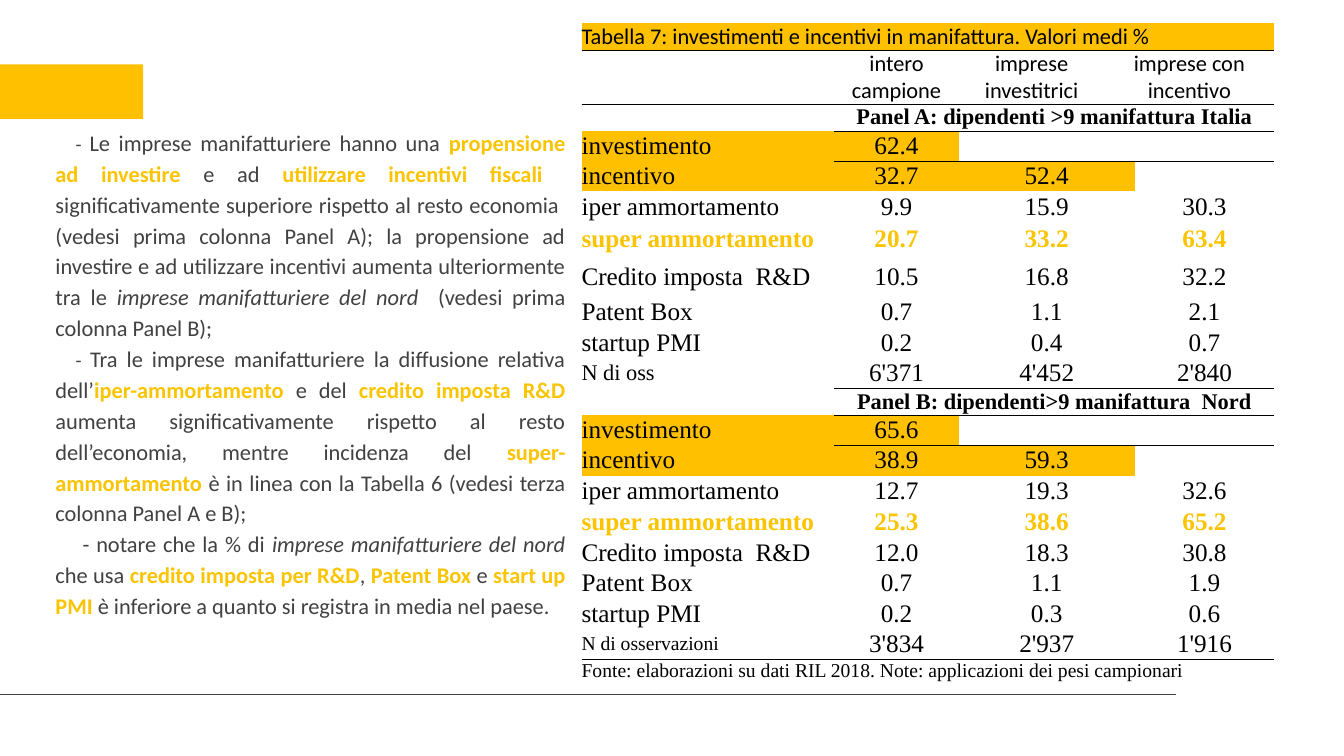
from lxml import etree
from pptx import Presentation
from pptx.dml.color import RGBColor
from pptx.enum.shapes import MSO_CONNECTOR, MSO_SHAPE
from pptx.enum.text import MSO_ANCHOR, MSO_AUTO_SIZE, PP_ALIGN
from pptx.oxml.ns import qn
from pptx.util import Pt

LEFT, CENTER, JUST = PP_ALIGN.LEFT, PP_ALIGN.CENTER, PP_ALIGN.JUSTIFY
MIDDLE, TOP = MSO_ANCHOR.MIDDLE, MSO_ANCHOR.TOP
RECT, STRAIGHT = MSO_SHAPE.RECTANGLE, MSO_CONNECTOR.STRAIGHT
GROW = MSO_AUTO_SIZE.SHAPE_TO_FIT_TEXT
NO_GRID = "{2D5ABB26-0587-4C30-8999-92F81FD0307C}"

AMBER, GOLD, GREY, BLACK = "FFC000", "FAC400", "404140", "000000"
SANS, SERIF = "Calibri", "Times New Roman"

BASE = {"name": SANS, "size": Pt(16), "color": GREY}
PLAIN, DASH, SLANT = {}, {"size": Pt(14)}, {"italic": True}
KEY = {"bold": True, "color": GOLD}

NOTES = [
    [("- ", DASH), ("Le imprese manifatturiere hanno una ", PLAIN),
     ("propensione ad investire ", KEY), ("e ad ", PLAIN),
     ("utilizzare incentivi fiscali  ", KEY),
     ("significativamente superiore rispetto al resto economia  (vedesi prima "
      "colonna Panel A); la propensione ad investire e ad utilizzare incentivi "
      "aumenta ulteriormente tra le ", PLAIN),
     ("imprese manifatturiere del nord  ", SLANT),
     ("(vedesi prima colonna Panel B);", PLAIN)],
    [("- ", DASH),
     ("Tra le imprese manifatturiere la diffusione relativa dell’", PLAIN),
     ("iper-ammortamento", KEY), (" e del ", PLAIN),
     ("credito imposta R&D ", KEY),
     ("aumenta significativamente rispetto al resto dell’economia, mentre "
      "incidenza del ", PLAIN),
     ("super-ammortamento ", KEY),
     ("è in linea con la Tabella 6 (vedesi terza colonna Panel A e B);", PLAIN)],
    [(" - notare che la % di ", PLAIN),
     ("imprese manifatturiere del nord ", SLANT), ("che usa ", PLAIN),
     ("credito imposta per R&D", KEY), (", ", PLAIN), ("Patent Box ", KEY),
     ("e ", PLAIN), ("start up PMI", KEY),
     (" è inferiore a quanto si registra in media nel paese.", PLAIN)],
]

# First and last column of each cell, by kind of row
SPANS = {
    "full": [(0, 4)],
    "head": [(0, 0), (1, 1), (2, 2), (3, 4)],
    "panel": [(0, 0), (1, 4)],
    "data": [(0, 0), (1, 1), (2, 3), (4, 4)],
}
STYLES = {
    "full": {"name": SERIF, "size": Pt(14)},
    "head": {"name": SANS, "size": Pt(16)},
    "panel": {"name": SERIF, "size": Pt(16), "bold": True},
    "data": {"name": SERIF, "size": Pt(18)},
}
LABELS = {
    "Tabella 7: investimenti e incentivi in manifattura. Valori medi %":
        {"name": SANS, "size": Pt(16)},
    "N di oss": {"size": Pt(16)},
    "N di osservazioni": {"size": Pt(14)},
}
FILLED = ("Tabella 7: investimenti e incentivi in manifattura. Valori medi %",
          "investimento", "incentivo")
STRONG = "super ammortamento"

ROWS = [  # kind, height, texts
    ("full", 18, ["Tabella 7: investimenti e incentivi in manifattura. Valori medi %"]),
    ("head", 36, ["", "intero campione", "imprese investitrici", "imprese con incentivo"]),
    ("panel", 18, ["", "Panel A: dipendenti >9 manifattura Italia"]),
    ("data", 20, ["investimento", "62.4", "", ""]),
    ("data", 20, ["incentivo", "32.7", "52.4", ""]),
    ("data", 20, ["iper ammortamento", "9.9", "15.9", "30.3"]),
    ("data", 24.5, ["super ammortamento", "20.7", "33.2", "63.4"]),
    ("data", 29.5, ["Credito imposta  R&D", "10.5", "16.8", "32.2"]),
    ("data", 21, ["Patent Box", "0.7", "1.1", "2.1"]),
    ("data", 20, ["startup PMI", "0.2", "0.4", "0.7"]),
    ("data", 20, ["N di oss", "6'371", "4'452", "2'840"]),
    ("panel", 18, ["", "Panel B: dipendenti>9 manifattura  Nord"]),
    ("data", 20, ["investimento", "65.6", "", ""]),
    ("data", 20, ["incentivo", "38.9", "59.3", ""]),
    ("data", 18, ["iper ammortamento", "12.7", "19.3", "32.6"]),
    ("data", 23, ["super ammortamento", "25.3", "38.6", "65.2"]),
    ("data", 18, ["Credito imposta  R&D", "12.0", "18.3", "30.8"]),
    ("data", 18, ["Patent Box", "0.7", "1.1", "1.9"]),
    ("data", 18, ["startup PMI", "0.2", "0.3", "0.6"]),
    ("data", 20, ["N di osservazioni", "3'834", "2'937", "1'916"]),
    ("full", 16, ["Fonte: elaborazioni su dati RIL 2018. Note: applicazioni dei pesi campionari"]),
]
WIDTHS = [180.7, 88.6, 104.4, 21.6, 99.4]
RULES = {0: 0, 1: 1, 2: 1, 10: 1, 11: 1, 19: 0}  # row: first column ruled below


def tint(code):
    return RGBColor.from_string(code)


def put(obj, **vals):
    for key, val in vals.items():
        setattr(obj, key, val)


class Page:
    def __init__(self, deck):
        self.slide = deck.slides.add_slide(deck.slide_layouts[1])
        self.shapes = self.slide.shapes
        title = self.shapes.title.element
        title.getparent().remove(title)

    def run(self, para, text, style):
        run = para.add_run()
        run.text = text
        for key, val in style.items():
            if key == "color":
                run.font.color.rgb = tint(val)
            else:
                setattr(run.font, key, val)

    def block(self, x, y, w, h, color):
        box = self.shapes.add_shape(RECT, Pt(x), Pt(y), Pt(w), Pt(h))
        box.shadow.inherit = False
        box.fill.solid()
        box.fill.fore_color.rgb = tint(color)
        box.line.fill.background()

    def line(self, x1, y1, x2, y2, color):
        line = self.shapes.add_connector(STRAIGHT, Pt(x1), Pt(y1), Pt(x2), Pt(y2))
        line.line.width = Pt(1)
        line.line.color.rgb = tint(color)
        etree.SubElement(line.element.spPr, qn("a:effectLst"))

    def body(self, x, y, w, h, paras):
        box = self.slide.placeholders[1]
        put(box, left=Pt(x), top=Pt(y), width=Pt(w), height=Pt(h))
        frame = box.text_frame
        put(frame, word_wrap=True, auto_size=GROW, vertical_anchor=TOP)
        for i, runs in enumerate(paras):
            para = frame.add_paragraph() if i else frame.paragraphs[0]
            props = para._p.get_or_add_pPr()
            props.set("marL", "0")
            props.set("indent", str(Pt(14.4)))
            etree.SubElement(props, qn("a:buNone"))
            put(para, alignment=JUST, line_spacing=1.15, space_before=Pt(0))
            for text, style in runs:
                self.run(para, text, BASE | style)

    def edge(self, cell, side):
        props = cell._tc.get_or_add_tcPr()
        line = etree.SubElement(props, qn("a:" + side), w=str(Pt(0.5)))
        fill = etree.SubElement(line, qn("a:solidFill"))
        etree.SubElement(fill, qn("a:srgbClr"), val=BLACK)

    def cell(self, cell, text, style, align, fill):
        put(cell, margin_left=0, margin_right=0, margin_top=0, margin_bottom=0,
            vertical_anchor=MIDDLE)
        para = cell.text_frame.paragraphs[0]
        para.alignment = align
        if text:
            self.run(para, text, style)
        else:
            etree.SubElement(para._p, qn("a:endParaRPr"), sz="1600")
        if fill:
            cell.fill.solid()
            cell.fill.fore_color.rgb = tint(fill)
        else:
            cell.fill.background()

    def table(self, x, y, widths, rows, rules):
        high = sum(row[1] for row in rows)
        frame = self.shapes.add_table(len(rows), len(widths), Pt(x), Pt(y),
                                      Pt(sum(widths)), Pt(high))
        grid = frame.table
        put(grid, first_row=False, horz_banding=False)
        grid._tbl.tblPr.find(qn("a:tableStyleId")).text = NO_GRID
        for col, width in zip(grid.columns, widths):
            col.width = Pt(width)
        for r, (kind, height, texts) in enumerate(rows):
            grid.rows[r].height = Pt(height)
            for c in range(len(widths)):
                for row, side in ((r - 1, "lnT"), (r, "lnB")):
                    if c >= rules.get(row, len(widths)):
                        self.edge(grid.cell(r, c), side)
            label = texts[0]
            style = {"color": BLACK} | STYLES[kind]
            if label == STRONG:
                style |= KEY
            for (first, last), text in zip(SPANS[kind], texts):
                cell = grid.cell(r, first)
                if last > first:
                    cell.merge(grid.cell(r, last))
                self.cell(cell, text, style | LABELS.get(text, {}),
                          CENTER if first else LEFT,
                          AMBER if text and label in FILLED else None)


def main():
    deck = Presentation()
    put(deck, slide_width=Pt(960), slide_height=Pt(540))
    page = Page(deck)
    page.block(0, 46, 102.2, 39, AMBER)
    page.line(0, 496, 840, 496, GREY)
    page.body(32.4, 85.7, 378.7, 364.3, NOTES)
    page.table(415.4, 16.6, WIDTHS, ROWS, RULES)
    deck.save("out.pptx")


if __name__ == "__main__":
    main()
